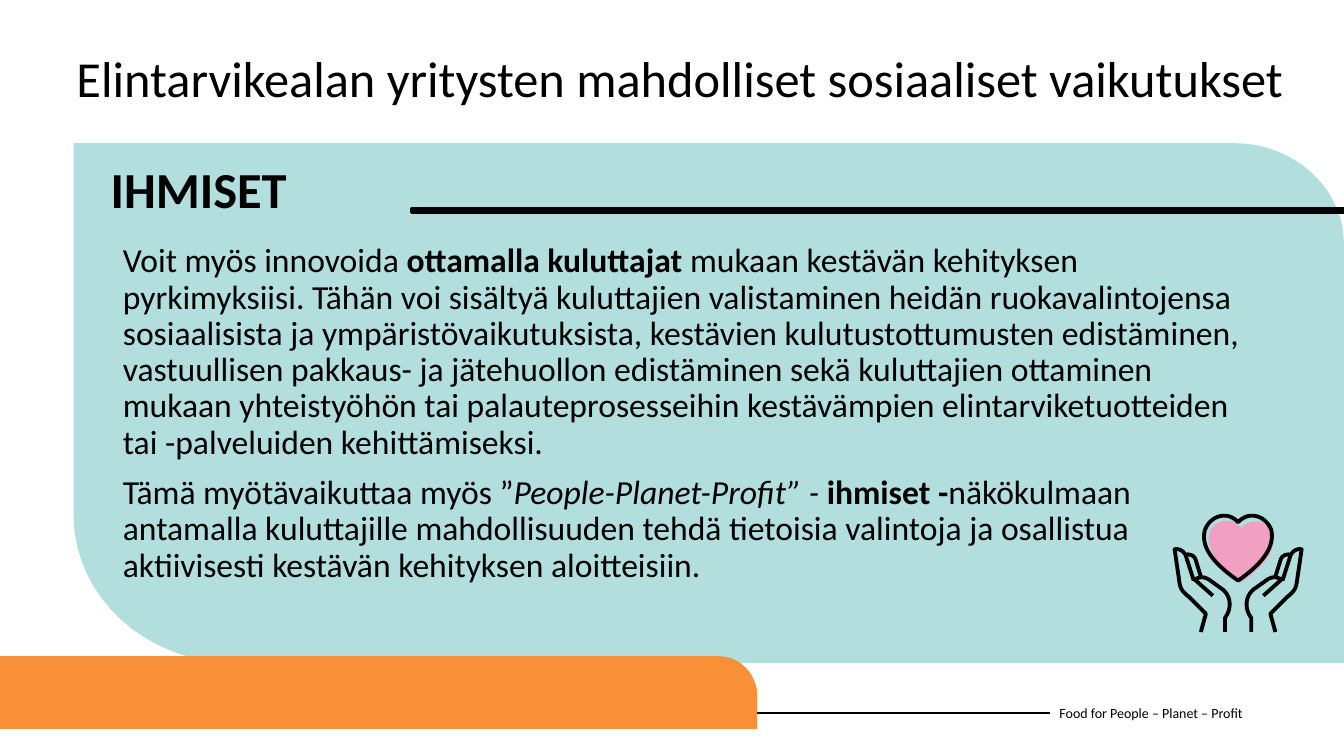
from pptx import Presentation
from pptx.dml.color import RGBColor as RGB
from pptx.enum.shapes import MSO_CONNECTOR as Link
from pptx.enum.text import MSO_ANCHOR as Anchor
from pptx.oxml.ns import qn
from pptx.util import Inches, Pt
from lxml.etree import SubElement

BLACK, TEAL, ORANGE, PINK = "000000", "B2DEDD", "F79037", "F1A0C2"
FONT = "Calibri"
AXIS = 12.28
STROKE = 2.75
STEPS = 16

TEXTS = [
    dict(box=(10.41, 6.87, 2.73, 0.4), size=10, form={}, anchor=Anchor.MIDDLE,
         paras=[[("Food for People – Planet – Profit", {})]]),
    dict(box=(1.12, 2.37, 11.31, 3.76), size=24, anchor=Anchor.TOP,
         form={"line_spacing": 0.9, "space_before": Pt(10)},
         paras=[
             [("Voit myös innovoida ", {}),
              ("ottamalla kuluttajat ", {"bold": True}),
              ("mukaan kestävän kehityksen pyrkimyksiisi. Tähän voi sisältyä "
               "kuluttajien valistaminen heidän ruokavalintojensa sosiaalisista ja "
               "ympäristövaikutuksista, kestävien kulutustottumusten edistäminen, "
               "vastuullisen pakkaus- ja jätehuollon edistäminen sekä kuluttajien "
               "ottaminen mukaan yhteistyöhön tai palauteprosesseihin kestävämpien "
               "elintarviketuotteiden tai -palveluiden kehittämiseksi.", {})],
             [("Tämä myötävaikuttaa myös ”", {}),
              ("People-Planet-Profit” - ", {"italic": True}),
              ("ihmiset -", {"bold": True}),
              ("näkökulmaan antamalla kuluttajille mahdollisuuden tehdä tietoisia "
               "valintoja ja osallistua aktiivisesti kestävän kehityksen "
               "aloitteisiin.", {})],
         ]),
    dict(box=(0.66, 0.49, 12.26, 0.88), size=36, anchor=Anchor.TOP,
         form={"line_spacing": 0.9, "space_before": Pt(10)},
         paras=[[("Elintarvikealan yritysten mahdolliset sosiaaliset vaikutukset", {})]]),
    dict(box=(1, 1.52, 2.67, 0.71), size=36, form={}, anchor=Anchor.TOP,
         paras=[[("IHMISET", {"bold": True})]]),
]

PANEL = [(0.73, 1.42), (12.24, 1.42), (12.84, 1.42, 13.33, 1.87, 13.33, 2.42),
         (13.33, 6.58), (2.34, 6.58), (1.45, 6.58, 0.73, 5.92, 0.73, 5.11)]
BAND = [(0, 7.23), (0, 6.51), (7.13, 6.51),
        (7.34, 6.51, 7.51, 6.69, 7.51, 6.9), (7.51, 7.23)]
RULE = [(4.08, 2.07), (13.33, 2.07), (13.33, 2.11), (4.08, 2.11)]
FILL = [(12.31, 5.24), (12.42, 5.12, 12.58, 5.17, 12.62, 5.3),
        (12.67, 5.49, 12.49, 5.65, 12.31, 5.78),
        (12.14, 5.66, 12.01, 5.52, 11.99, 5.37),
        (11.96, 5.2, 12.19, 5.08, 12.31, 5.24)]
HEART = [(12.28, 5.18), (12.39, 5.06, 12.56, 5.12, 12.61, 5.26),
         (12.65, 5.45, 12.48, 5.62, 12.28, 5.76),
         (12.08, 5.62, 11.9, 5.45, 11.95, 5.26),
         (12, 5.12, 12.17, 5.06, 12.28, 5.18)]
HAND = [
    [(12.41, 6.27), (12.41, 6.13), (12.35, 6.05, 12.34, 5.93, 12.43, 5.85),
     (12.57, 5.75), (12.62, 5.72, 12.66, 5.72, 12.71, 5.75), (12.53, 5.91)],
    [(12.65, 6.27), (12.6, 6.09), (12.77, 5.92),
     (12.82, 5.88, 12.85, 5.85, 12.86, 5.79), (12.91, 5.45),
     (12.86, 5.44, 12.82, 5.47, 12.8, 5.51), (12.72, 5.76)],
    [(12.65, 5.72), (12.7, 5.56), (12.71, 5.52, 12.74, 5.5, 12.79, 5.5)],
]


def color(code):
    return RGB.from_string(code)


def trace(path):
    dots = [path[0]]
    for part in path[1:]:
        if len(part) == 2:
            dots.append(part)
            continue
        knots = [dots[-1], part[:2], part[2:4], part[4:]]
        for step in range(1, STEPS + 1):
            t = step / STEPS
            mix = ((1 - t) ** 3, 3 * t * (1 - t) ** 2, 3 * t * t * (1 - t), t ** 3)
            dots.append(tuple(sum(m * k[i] for m, k in zip(mix, knots))
                              for i in (0, 1)))
    return [(Inches(x), Inches(y)) for x, y in dots]


def flip(path):
    return [tuple(2 * AXIS - n if i % 2 == 0 else n for i, n in enumerate(part))
            for part in path]


def draw(shapes, paths, fill=None, width=0, close=True):
    lines = [trace(path) for path in paths]
    pen = shapes.build_freeform(*lines[0][0])
    for i, dots in enumerate(lines):
        if i:
            pen.move_to(*dots[0])
        pen.add_line_segments(dots[1:], close=close)
    shape = pen.convert_to_shape()
    shape.shadow.inherit = False
    for part, code in ((shape.fill, fill), (shape.line.fill, BLACK if width else None)):
        if code:
            part.solid()
            part.fore_color.rgb = color(code)
        else:
            part.background()
    if width:
        shape.line.width = Pt(width)


def write(shapes, box, size, form, anchor, paras):
    frame = shapes.add_textbox(*map(Inches, box)).text_frame
    frame.word_wrap = True
    frame.vertical_anchor = anchor
    for i, runs in enumerate(paras):
        para = frame.add_paragraph() if i else frame.paragraphs[0]
        for key, val in form.items():
            setattr(para, key, val)
        for text, style in runs:
            run = para.add_run()
            run.text = text
            for key, val in {"name": FONT, "size": Pt(size), **style}.items():
                setattr(run.font, key, val)
            run.font.color.rgb = color(BLACK)


def main():
    deck = Presentation()
    deck.slide_width, deck.slide_height = Inches(13.33), Inches(7.5)
    shapes = deck.slides.add_slide(deck.slide_layouts[6]).shapes

    foot = shapes.add_connector(Link.STRAIGHT, *map(Inches, (0, 7.07, 10.41, 7.07)))
    foot.line.color.rgb = color(BLACK)
    foot.line.width = Pt(1.5)
    SubElement(foot._element.spPr, qn("a:effectLst"))

    draw(shapes, [PANEL], TEAL)
    draw(shapes, [BAND], ORANGE)
    draw(shapes, [RULE], BLACK, 1.93)
    for text in TEXTS:
        write(shapes, **text)

    icon = shapes.add_group_shape().shapes
    draw(icon, [FILL], PINK)
    for hand in (HAND, [flip(path) for path in HAND]):
        draw(icon, hand, width=STROKE, close=False)
    draw(icon, [HEART], width=STROKE)
    deck.save("out.pptx")


if __name__ == "__main__":
    main()
